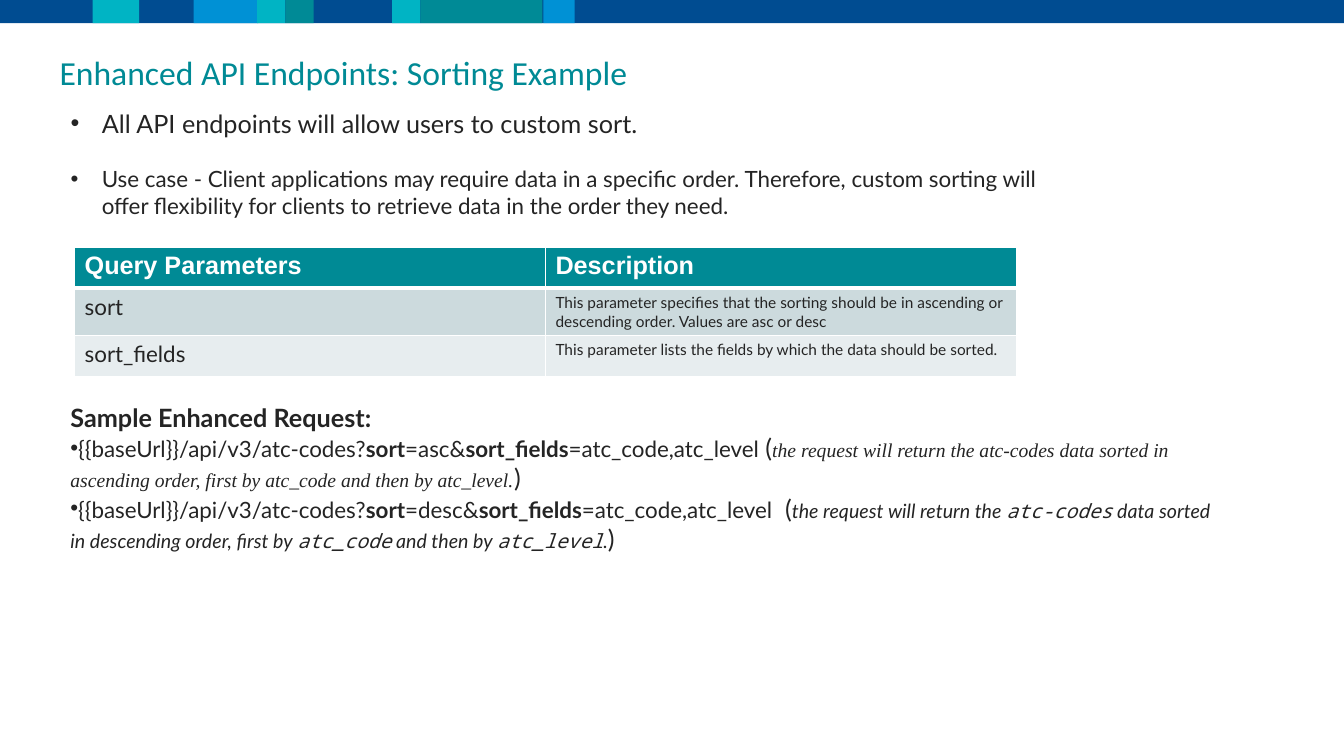
from collections import namedtuple
from dataclasses import dataclass

from lxml import etree
from pptx import Presentation
from pptx.dml.color import RGBColor
from pptx.enum.shapes import MSO_SHAPE
from pptx.enum.text import MSO_ANCHOR, MSO_AUTO_SIZE, PP_ALIGN
from pptx.oxml.ns import qn
from pptx.util import Inches, Pt

RECTANGLE = MSO_SHAPE.RECTANGLE
TOP = MSO_ANCHOR.TOP
LEFT = PP_ALIGN.LEFT
GROW = MSO_AUTO_SIZE.SHAPE_TO_FIT_TEXT

Box = namedtuple("Box", "left top width height")


@dataclass(frozen=True)
class Theme:
    navy: str = "004C91"
    cyan: str = "00B4C4"
    blue: str = "0091D5"
    teal: str = "008A96"
    heading: str = "008A95"
    text: str = "242424"
    white: str = "FFFFFF"
    row_dark: str = "CCDADD"
    row_light: str = "E7EDEF"
    title_size: int = 24
    lead_size: int = 18
    body_size: int = 16
    note_size: int = 14
    cell_size: int = 11
    title_font: str = "Calibri"
    body_font: str = "Lato"
    table_font: str = "Arial"
    serif_font: str = "Times New Roman"
    mono_font: str = "Noto Sans Mono"


THEME = Theme()

BASE = dict(name=THEME.body_font, size=THEME.body_size, color=THEME.text,
            bold=False, italic=False)
LEAD = BASE | dict(size=THEME.lead_size)
STRONG = BASE | dict(bold=True)
NOTE = BASE | dict(size=THEME.note_size, italic=True)
SERIF = NOTE | dict(name=THEME.serif_font)
MONO = NOTE | dict(name=THEME.mono_font)
SMALL = BASE | dict(size=THEME.cell_size)
TITLE = BASE | dict(name=THEME.title_font, size=THEME.title_size, color=THEME.heading)
HEADER = LEAD | dict(name=THEME.table_font, color=THEME.white, bold=True)

# Stripe blocks: left, width, colour
STRIPES = [
    (0, 13.33, THEME.navy), (0.92, 0.46, THEME.cyan), (1.92, 0.64, THEME.blue),
    (2.55, 0.28, THEME.cyan), (2.83, 0.28, THEME.teal), (3.89, 0.28, THEME.cyan),
    (4.17, 1.21, THEME.teal), (5.39, 0.31, THEME.blue),
]

INTRO = [
    [("All API endpoints will allow users to custom sort.", LEAD)],
    [("Use case - Client applications may require data in a specific order. Therefore, "
      "custom sorting will offer flexibility for clients to retrieve data in the order "
      "they need.", BASE)],
]

PARAMETERS = [
    ("Query Parameters", "Description"),
    ("sort", "This parameter specifies that the sorting should be in ascending or "
             "descending order. Values are asc or desc"),
    ("sort_fields", "This parameter lists the fields by which the data should be sorted."),
]
# Table rows: height, fill, style of each column
ROW_LOOKS = [
    (0.41, THEME.heading, (HEADER, HEADER)),
    (0.46, THEME.row_dark, (BASE, SMALL)),
    (0.41, THEME.row_light, (BASE, SMALL)),
]


def request(order):
    return [("{{baseUrl}}/api/v3/atc-codes?", BASE), ("sort", STRONG), (f"={order}&", BASE),
            ("sort_fields", STRONG), ("=atc_code,atc_level", BASE)]


ASCENDING = request("asc") + [
    (" (", LEAD),
    ("the request will return the atc-codes data sorted in ascending order, "
     "first by atc_code and then by atc_level.", SERIF),
    (")", LEAD),
]
DESCENDING = request("desc") + [
    ("  (", LEAD), ("the request will return the ", NOTE), ("atc-codes", MONO),
    (" data sorted in descending order, first by ", NOTE), ("atc_code", MONO),
    (" and then by ", NOTE), ("atc_level", MONO), (".", NOTE), (")", LEAD),
]


def place(shape, box):
    for side, length in box._asdict().items():
        setattr(shape, side, Inches(length))


def set_frame(frame):
    for key, value in dict(word_wrap=True, vertical_anchor=TOP, auto_size=GROW).items():
        setattr(frame, key, value)


def set_bullet(para, indent=0):
    props = para._p.get_or_add_pPr()
    props.set("marL", str(Inches(indent)))
    props.set("indent", str(-Inches(indent)))
    etree.SubElement(props, qn("a:buFont")).set("typeface", "Arial")
    etree.SubElement(props, qn("a:buChar")).set("char", "•")


def write(para, spans, gap=0):
    for key, value in dict(alignment=LEFT, space_before=Pt(gap), space_after=Pt(0)).items():
        setattr(para, key, value)
    for text, style in spans:
        span = para.add_run()
        span.text = text
        span.font.color.rgb = RGBColor.from_string(style["color"])
        span.font.size = Pt(style["size"])
        for key in ("name", "bold", "italic"):
            setattr(span.font, key, style[key])


def add_paragraph(frame, index):
    return frame.add_paragraph() if index else frame.paragraphs[0]


def draw_stripes(page, box):
    for left, width, color in STRIPES:
        block = page.shapes.add_shape(RECTANGLE, Inches(box.left + left), Inches(box.top),
                                      Inches(width), Inches(box.height))
        block.shadow.inherit = False
        block.fill.solid()
        block.fill.fore_color.rgb = RGBColor.from_string(color)
        block.line.fill.background()


def fill_title(page, box):
    title = page.shapes.title
    place(title, box)
    set_frame(title.text_frame)
    write(title.text_frame.paragraphs[0], [("Enhanced API Endpoints: Sorting Example", TITLE)])


def fill_intro(page, box):
    body = page.placeholders[1]
    place(body, box)
    set_frame(body.text_frame)
    for index, spans in enumerate(INTRO):
        para = add_paragraph(body.text_frame, index)
        set_bullet(para, 0.31)
        write(para, spans, gap=19.5 * index)


def set_borders(cell, widths):
    props = cell._tc.get_or_add_tcPr()
    for index, (side, width) in enumerate(widths.items()):
        line = etree.Element(qn(f"a:ln{side}"), w=str(Pt(width)))
        fill = etree.SubElement(line, qn("a:solidFill"))
        etree.SubElement(fill, qn("a:srgbClr")).set("val", THEME.white)
        props.insert(index, line)


def draw_table(page, box):
    lengths = [Inches(length) for length in box]
    table = page.shapes.add_table(len(PARAMETERS), 2, *lengths).table
    for row, (texts, look) in enumerate(zip(PARAMETERS, ROW_LOOKS)):
        height, color, styles = look
        table.rows[row].height = Inches(height)
        for column, (text, style) in enumerate(zip(texts, styles)):
            cell = table.cell(row, column)
            cell.fill.solid()
            cell.fill.fore_color.rgb = RGBColor.from_string(color)
            set_borders(cell, dict(L=1, R=1, T=3 if row == 1 else 1, B=3 if row == 0 else 1))
            write(cell.text_frame.paragraphs[0], [(text, style)])


def draw_requests(page, box):
    frame = page.shapes.add_textbox(*[Inches(length) for length in box]).text_frame
    set_frame(frame)
    write(frame.paragraphs[0], [("Sample Enhanced Request:", LEAD | dict(bold=True))])
    for spans in (ASCENDING, DESCENDING):
        para = frame.add_paragraph()
        set_bullet(para)
        write(para, spans)


def main():
    deck = Presentation()
    deck.slide_width, deck.slide_height = Inches(13.33), Inches(7.5)
    page = deck.slides.add_slide(deck.slide_layouts[1])
    draw_stripes(page, Box(0, 0, 13.33, 0.23))
    fill_title(page, Box(0.49, 0.46, 6.32, 0.5))
    fill_intro(page, Box(0.6, 1.02, 10.28, 1.21))
    draw_table(page, Box(0.74, 2.45, 9.34, 1.28))
    draw_requests(page, Box(0.6, 3.94, 11.59, 1.62))
    deck.save("out.pptx")


if __name__ == "__main__":
    main()
